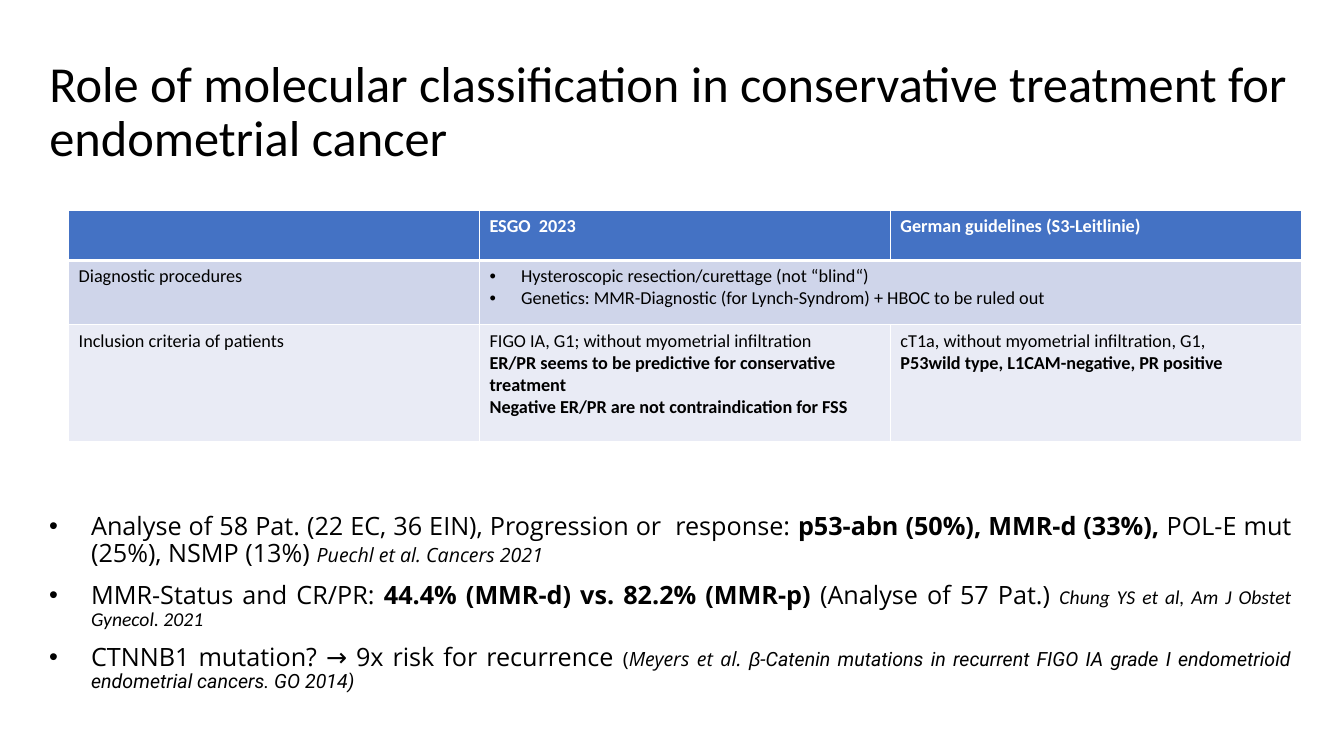
from lxml.etree import SubElement
from pptx import Presentation
from pptx.dml.color import RGBColor
from pptx.enum.text import MSO_ANCHOR as Anchor, MSO_AUTO_SIZE as Fit, PP_ALIGN as Align
from pptx.oxml import parse_xml
from pptx.oxml.ns import qn
from pptx.util import Pt

NS = "http://schemas.openxmlformats.org/drawingml/2006/main"


def color(code):
    return RGBColor.from_string(code)


class Deck:
    sans = {"name": "Open Sans", "size": Pt(18)}
    cell = {"name": "Calibri", "size": Pt(13)}
    fills = ["4472C4", "CFD5EA", "E9EBF5"]

    def __init__(self, wide, high):
        self.prs = Presentation()
        self.prs.slide_width, self.prs.slide_height = Pt(wide), Pt(high)
        self.slide = self.prs.slides.add_slide(self.prs.slide_layouts[5])

    def place(self, shape, box):
        for name, value in zip(("left", "top", "width", "height"), box):
            setattr(shape, name, Pt(value))

    def fill_text(self, para, runs, base, ink="000000"):
        """Add (text, format) runs; each format overrides the base."""
        for text, form in runs:
            run = para.add_run()
            run.text = text
            for name, value in {**base, **form}.items():
                setattr(run.font, name, value)
            run.font.color.rgb = color(ink)

    def bullet(self, para, indent):
        props = para._p.get_or_add_pPr()
        props.set("marL", str(Pt(indent)))
        props.set("indent", str(-Pt(indent)))
        SubElement(props, qn("a:buFont"), typeface="Arial")
        SubElement(props, qn("a:buChar"), char="•")

    def title(self, text, box):
        shape = self.slide.shapes.title
        self.place(shape, box)
        frame = shape.text_frame
        for name, value in {"word_wrap": True, "auto_size": Fit.NONE,
                            "vertical_anchor": Anchor.MIDDLE}.items():
            setattr(frame, name, value)
        para = frame.paragraphs[0]
        para.alignment, para.line_spacing = Align.LEFT, 0.9
        self.fill_text(para, [(text, {})], {"name": "Calibri", "size": Pt(36)})

    def points(self, items, box):
        frame = self.slide.shapes.add_textbox(*map(Pt, box)).text_frame
        frame.word_wrap = True
        for i, runs in enumerate(items):
            para = frame.add_paragraph() if i else frame.paragraphs[0]
            self.bullet(para, 30)
            para.alignment, para.line_spacing = Align.JUSTIFY, 0.9
            para.space_before = Pt(10 if i else 0)
            self.fill_text(para, runs, self.sans)

    def edges(self, cell, row):
        """Draw white cell borders, thicker below the header row."""
        widths = {"L": 1, "R": 1, "T": 3 if row == 1 else 1, "B": 1 if row else 3}
        props = cell._tc.get_or_add_tcPr()
        for i, (side, width) in enumerate(widths.items()):
            props.insert(i, parse_xml(
                f'<a:ln{side} xmlns:a="{NS}" w="{Pt(width)}"><a:solidFill>'
                f'<a:srgbClr val="FFFFFF"/></a:solidFill></a:ln{side}>'))

    def table(self, rows, box, heights):
        shape = self.slide.shapes.add_table(len(rows), len(rows[0]), *map(Pt, box))
        grid = shape.table
        for row, high in zip(grid.rows, heights):
            row.height = Pt(high)
        grid.cell(1, 1).merge(grid.cell(1, 2))
        for r, row in enumerate(rows):
            for c, lines in enumerate(row):
                cell = grid.cell(r, c)
                cell.fill.solid()
                cell.fill.fore_color.rgb = color(self.fills[r])
                self.edges(cell, r)
                frame = cell.text_frame
                for i, (text, bold) in enumerate(lines):
                    para = frame.add_paragraph() if i else frame.paragraphs[0]
                    if cell.is_merge_origin:
                        self.bullet(para, 22.5)
                    self.fill_text(para, [(text, {"bold": bold})], self.cell,
                                   "000000" if r else "FFFFFF")


BOLD = {"bold": True}
CITE = {"size": Pt(14), "italic": True}

ROWS = [
    [[], [("ESGO  2023", True)], [("German guidelines (S3-Leitlinie)", True)]],
    [[("Diagnostic procedures", False)],
     [("Hysteroscopic resection/curettage (not “blind“)", False),
      ("Genetics: MMR-Diagnostic (for Lynch-Syndrom) + HBOC to be ruled out", False)],
     []],
    [[("Inclusion criteria of patients", False)],
     [("FIGO IA, G1; without myometrial infiltration", False),
      ("ER/PR seems to be predictive for conservative treatment", True),
      ("Negative ER/PR are not contraindication for FSS", True)],
     [("cT1a, without myometrial infiltration, G1,", False),
      ("P53wild type, L1CAM-negative, PR positive", True)]],
]

STUDIES = [
    [("Analyse of 58 Pat. (22 EC, 36 EIN), Progression or  response: ", {}),
     ("p53-abn (50%), MMR-d (33%), ", BOLD),
     ("POL-E mut (25%), NSMP (13%) ", {}),
     ("Puechl et al. Cancers 2021", CITE)],
    [("MMR-Status and CR/PR: ", {}),
     ("44.4% (MMR-d) vs. 82.2% (MMR-p) ", BOLD),
     ("(Analyse of 57 Pat.) ", {}),
     ("Chung YS et al, Am J Obstet Gynecol. 2021", {**CITE, "name": "Calibri"})],
    [("CTNNB1 mutation? → 9x risk for recurrence ", {}),
     ("(", {"size": Pt(14)}),
     ("Meyers et al. ", CITE),
     ("β", {**CITE, "name": "Arial"}),
     ("-Catenin mutations in recurrent FIGO IA grade I endometrioid "
      "endometrial cancers. GO 2014)", {**CITE, "name": "Roboto"})],
]


def main():
    deck = Deck(960, 540)
    deck.title("Role of molecular classification in conservative treatment for "
               "endometrial cancer", (28, 29, 916, 104))
    deck.points(STUDIES, (28, 363.5, 901.5, 158.5))
    deck.table(ROWS, (49, 150, 880.5, 165.5), (36, 46, 83.5))
    deck.prs.save("out.pptx")


if __name__ == "__main__":
    main()
